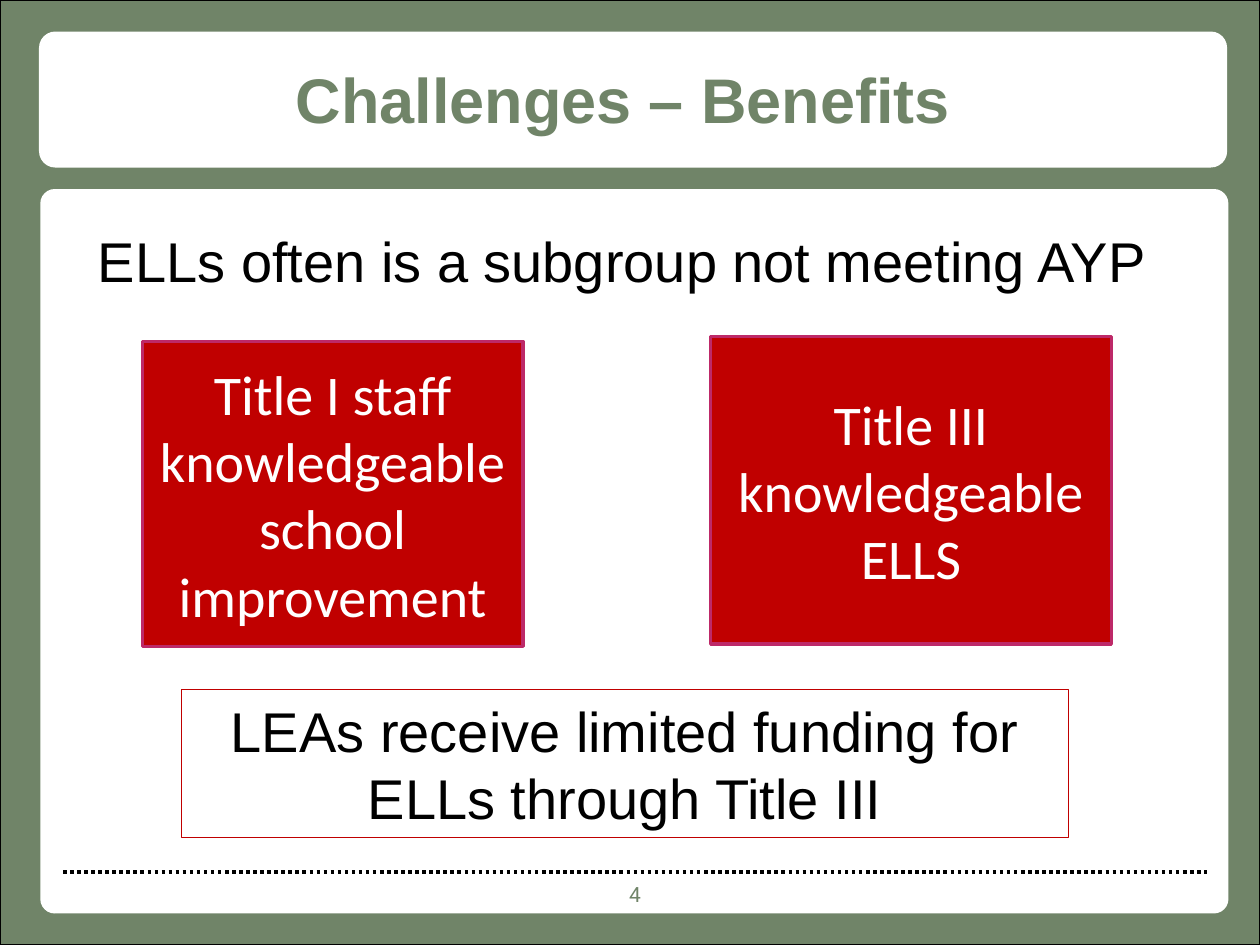
from dataclasses import dataclass

from lxml.etree import SubElement
from pptx import Presentation
from pptx.dml.color import RGBColor
from pptx.enum.dml import MSO_LINE
from pptx.enum.shapes import MSO_CONNECTOR, MSO_SHAPE
from pptx.enum.text import MSO_ANCHOR as Anchor, MSO_AUTO_SIZE as AutoSize, PP_ALIGN as Align
from pptx.oxml.ns import qn
from pptx.util import Emu, Pt

PX = 9144  # 100 px to the inch
GREEN, RED, MAGENTA = "708468", "C00000", "BD2968"
WHITE, BLACK = "FFFFFF", "000000"


@dataclass
class Area:
    left: int
    top: int
    width: int
    height: int

    def emu(self) -> list[Emu]:
        return [Emu(v * PX) for v in (self.left, self.top, self.width, self.height)]


@dataclass
class Panel:
    area: Area
    fill: str | None = None
    line: str | None = None
    line_width: float = 0.75
    radius: float | None = None
    text: str = ""
    font: str = "Arial"
    color: str = BLACK


def rgb(value: str) -> RGBColor:
    return RGBColor.from_string(value)


def write(shape, text: str, size: int, font: str, color: str,
          anchor=Anchor.MIDDLE, bold: bool = False):
    """Fill a shape with one centred paragraph and return it."""
    frame = shape.text_frame
    frame.word_wrap = True
    frame.auto_size = AutoSize.NONE
    frame.vertical_anchor = anchor
    para = frame.paragraphs[0]
    para.text = text
    para.alignment = Align.CENTER
    para.font.size = Pt(size)
    para.font.name = font
    para.font.bold = bold
    para.font.color.rgb = rgb(color)
    return para


def add_panel(page, panel: Panel) -> None:
    rounded = panel.radius is not None
    kind = MSO_SHAPE.ROUNDED_RECTANGLE if rounded else MSO_SHAPE.RECTANGLE
    box = page.shapes.add_shape(kind, *panel.area.emu())
    box.shadow.inherit = False
    if rounded:
        box.adjustments[0] = panel.radius
    if panel.fill:
        box.fill.solid()
        box.fill.fore_color.rgb = rgb(panel.fill)
    else:
        box.fill.background()
    if panel.line:
        box.line.color.rgb = rgb(panel.line)
        box.line.width = Pt(panel.line_width)
    else:
        box.line.fill.background()
    if panel.text:
        write(box, panel.text, 32, panel.font, panel.color)


def add_dotted_rule(page, left: int, right: int, y: int) -> None:
    rule = page.shapes.add_connector(
        MSO_CONNECTOR.STRAIGHT, *(Emu(v * PX) for v in (left, y, right, y)))
    rule.line.color.rgb = rgb(BLACK)
    rule.line.width = Pt(2)
    rule.line.dash_style = MSO_LINE.ROUND_DOT
    SubElement(rule._element.spPr, qn("a:effectLst"))


BACKDROP = [
    Panel(Area(0, 0, 1000, 750), GREEN, BLACK),
    Panel(Area(31, 25, 943, 108), WHITE, radius=0.12),
    Panel(Area(32, 150, 943, 575), WHITE, radius=0.02),
]
MESSAGES = [
    Panel(Area(113, 271, 302, 242), RED, MAGENTA, 2, font="Calibri", color=WHITE,
          text="Title I staff knowledgeable school improvement"),
    Panel(Area(564, 267, 318, 244), RED, MAGENTA, 2, font="Calibri", color=WHITE,
          text="Title III knowledgeable ELLS"),
    Panel(Area(144, 547, 704, 118), line=RED,
          text="LEAs receive limited funding for ELLs through Title III"),
]


def main() -> None:
    deck = Presentation()
    deck.slide_width, deck.slide_height = Emu(1000 * PX), Emu(750 * PX)
    page = deck.slides.add_slide(deck.slide_layouts[5])

    # Frame and footer
    for panel in BACKDROP:
        add_panel(page, panel)
    add_dotted_rule(page, 50, 958, 692)
    number = page.shapes.add_textbox(*Area(50, 695, 908, 30).emu())
    write(number, "4", 12, "Roboto", GREEN, Anchor.TOP)

    # Title, raised above the frame
    title = page.shapes.title
    title.left, title.top, title.width, title.height = Area(33, 32, 937, 103).emu()
    heading = write(title, "Challenges – Benefits ", 36, "Arial", GREEN, bold=True)
    heading.line_spacing = 0.8
    page.shapes._spTree.append(title._element)

    # Lead sentence and messages
    lead = page.shapes.add_textbox(*Area(50, 175, 900, 83).emu())
    sentence = write(lead, "ELLs often is a subgroup not meeting AYP ", 32,
                     "Arial", BLACK, Anchor.TOP)
    sentence.space_before = Pt(6)
    for panel in MESSAGES:
        add_panel(page, panel)

    deck.save("out.pptx")


if __name__ == "__main__":
    main()
